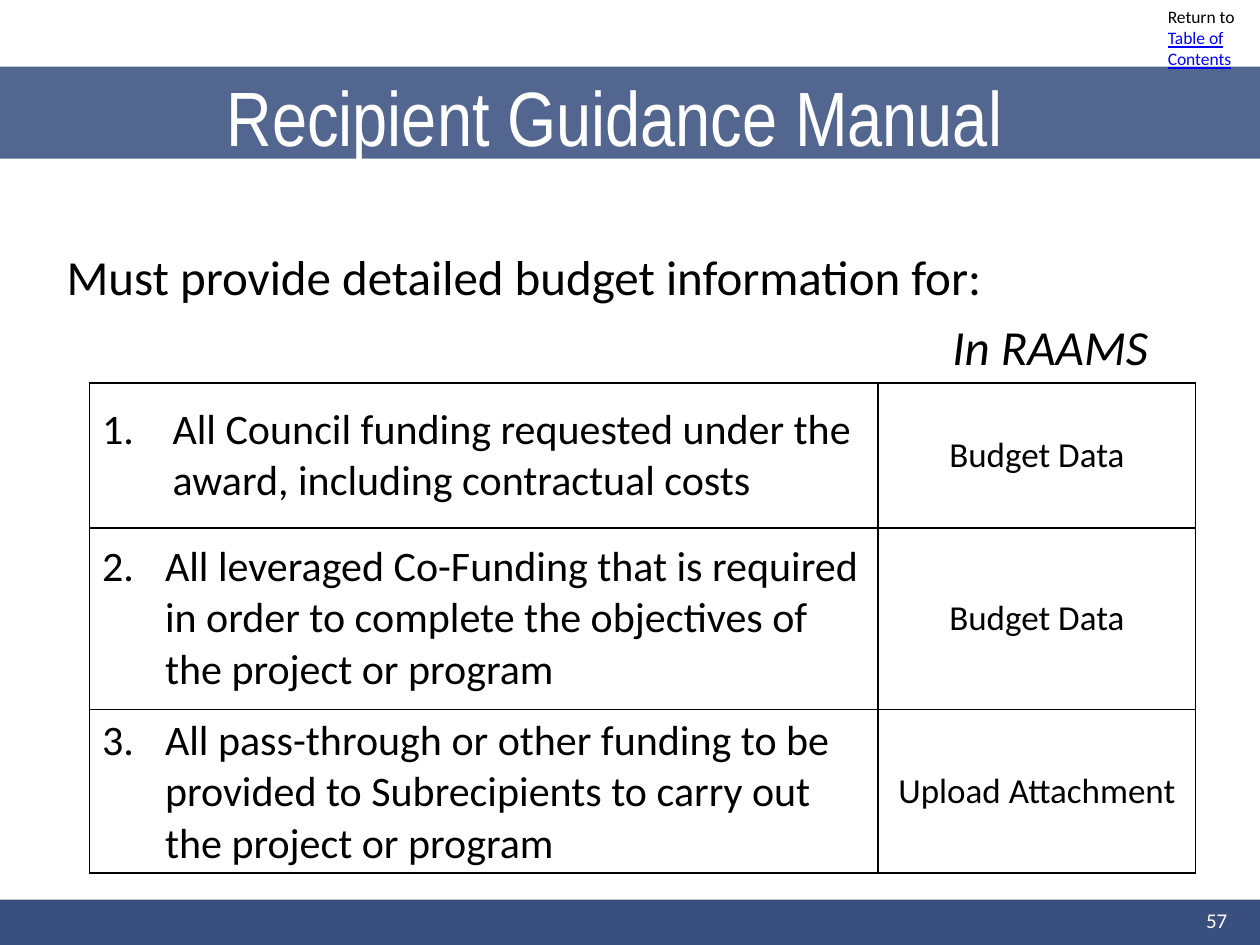
from lxml.etree import SubElement
from pptx import Presentation
from pptx.dml.color import RGBColor
from pptx.enum.shapes import MSO_SHAPE as Shape
from pptx.enum.text import MSO_ANCHOR as Anchor, MSO_AUTO_SIZE as AutoSize, PP_ALIGN as Align
from pptx.oxml.ns import qn
from pptx.util import Inches, Pt

COLS, ROWS = 100, 75  # grid of tenth-of-an-inch squares
NAVY, BLACK, WHITE, LINK = "39507F", "000000", "FFFFFF", "0000FF"


def color(hex_code):
    return RGBColor.from_string(hex_code)


def grid(*units):
    return [Inches(unit / 10) for unit in units]


class SlideBuilder:
    font = "Calibri"
    border_width = Pt(1)

    def __init__(self, slide):
        self.slide = slide

    def bar(self, top, height, opacity=100):
        bar = self.slide.shapes.add_shape(Shape.RECTANGLE, *grid(0, top, COLS, height))
        bar.shadow.inherit = False
        bar.fill.solid()
        bar.fill.fore_color.rgb = color(NAVY)
        bar.line.fill.background()
        if opacity < 100:
            tint = bar._element.spPr.find(qn("a:solidFill"))[0]
            SubElement(tint, qn("a:alpha"), val=str(opacity * 1000))

    def run(self, paragraph, words, size, ink=BLACK, font=None, italic=False, underline=False):
        run = paragraph.add_run()
        run.text = words
        run.font.size = Pt(size)
        run.font.name = font or self.font
        run.font.color.rgb = color(ink)
        if italic:
            run.font.italic = True
        if underline:
            run.font.underline = True

    def text(self, place, align=Align.LEFT, anchor=Anchor.TOP, grow=False):
        """Add a text box and return its first paragraph."""
        frame = self.slide.shapes.add_textbox(*grid(*place)).text_frame
        frame.word_wrap = True
        frame.vertical_anchor = anchor
        frame.auto_size = AutoSize.SHAPE_TO_FIT_TEXT if grow else AutoSize.NONE
        paragraph = frame.paragraphs[0]
        paragraph.alignment = align
        return paragraph

    def number(self, paragraph, start, indent):
        props = paragraph._p.get_or_add_pPr()
        props.set("marL", str(Inches(indent)))
        props.set("indent", str(-Inches(indent)))
        SubElement(props, qn("a:buFont"), typeface="+mj-lt")
        SubElement(props, qn("a:buAutoNum"), type="arabicPeriod", startAt=str(start))

    def borders(self, cell):
        props = cell._tc.get_or_add_tcPr()
        for position, side in enumerate(("lnL", "lnR", "lnT", "lnB")):
            line = SubElement(props, qn(f"a:{side}"), w=str(self.border_width))
            fill = SubElement(line, qn("a:solidFill"))
            SubElement(fill, qn("a:srgbClr"), val=BLACK)
            props.insert(position, line)

    def cell(self, cell, words, size, align):
        cell.fill.background()
        cell.vertical_anchor = Anchor.MIDDLE
        self.borders(cell)
        paragraph = cell.text_frame.paragraphs[0]
        paragraph.alignment = align
        self.run(paragraph, words, size)
        return paragraph

    def table(self, place, widths, heights, entries):
        table = self.slide.shapes.add_table(len(heights), len(widths), *grid(*place)).table
        table.first_row = table.horz_banding = False
        for column, width in zip(table.columns, grid(*widths)):
            column.width = width
        for row, height in zip(table.rows, grid(*heights)):
            row.height = height
        for index, (requirement, entry_place, indent) in enumerate(entries):
            item = self.cell(table.cell(index, 0), requirement, 24, Align.LEFT)
            self.number(item, index + 1, indent)
            self.cell(table.cell(index, 1), entry_place, 20, Align.CENTER)


def main():
    deck = Presentation()
    deck.slide_width, deck.slide_height = grid(COLS, ROWS)
    page = SlideBuilder(deck.slides.add_slide(deck.slide_layouts[6]))

    # Footer and title bars
    page.bar(71.4, 3.8)
    page.bar(5.3, 7.3, opacity=87)

    # Pointer to the contents page
    pointer = page.text((91.7, 0, 8.3, 6.1), grow=True)
    page.run(pointer, "Return to ", 10)
    page.run(pointer, "Table of Contents", 10, LINK, underline=True)

    # Title and lead-in
    title = page.text((17, 2.9, 73.5, 12.5), anchor=Anchor.MIDDLE)
    page.run(title, "Recipient Guidance Manual", 44, WHITE, font="Arial Narrow")
    lead_in = page.text((4.3, 19.1, 91.8, 5.4))
    page.run(lead_in, "Must provide detailed budget information for:", 28)

    # Heading over the right column
    heading = page.text((1.7, 24.6, 90.4, 49.5), Align.RIGHT)
    page.run(heading, "In RAAMS", 28, italic=True)

    # Funding requirements and where each is entered
    page.table((7.1, 30.4, 87.9, 38.9), (62.6, 25.2), (11.5, 14.4, 13), [
        ("All Council funding requested under the award, including contractual costs",
         "Budget Data", 0.56),
        ("All leveraged Co-Funding that is required in order to complete the objectives "
         "of the project or program", "Budget Data", 0.5),
        ("All pass-through or other funding to be provided to Subrecipients to carry out "
         "the project or program", "Upload Attachment", 0.5),
    ])

    # Page number
    page_number = page.text((75.1, 71, 23.3, 4), Align.RIGHT, Anchor.MIDDLE)
    page.run(page_number, "57", 12, WHITE)

    deck.save("out.pptx")


if __name__ == "__main__":
    main()
